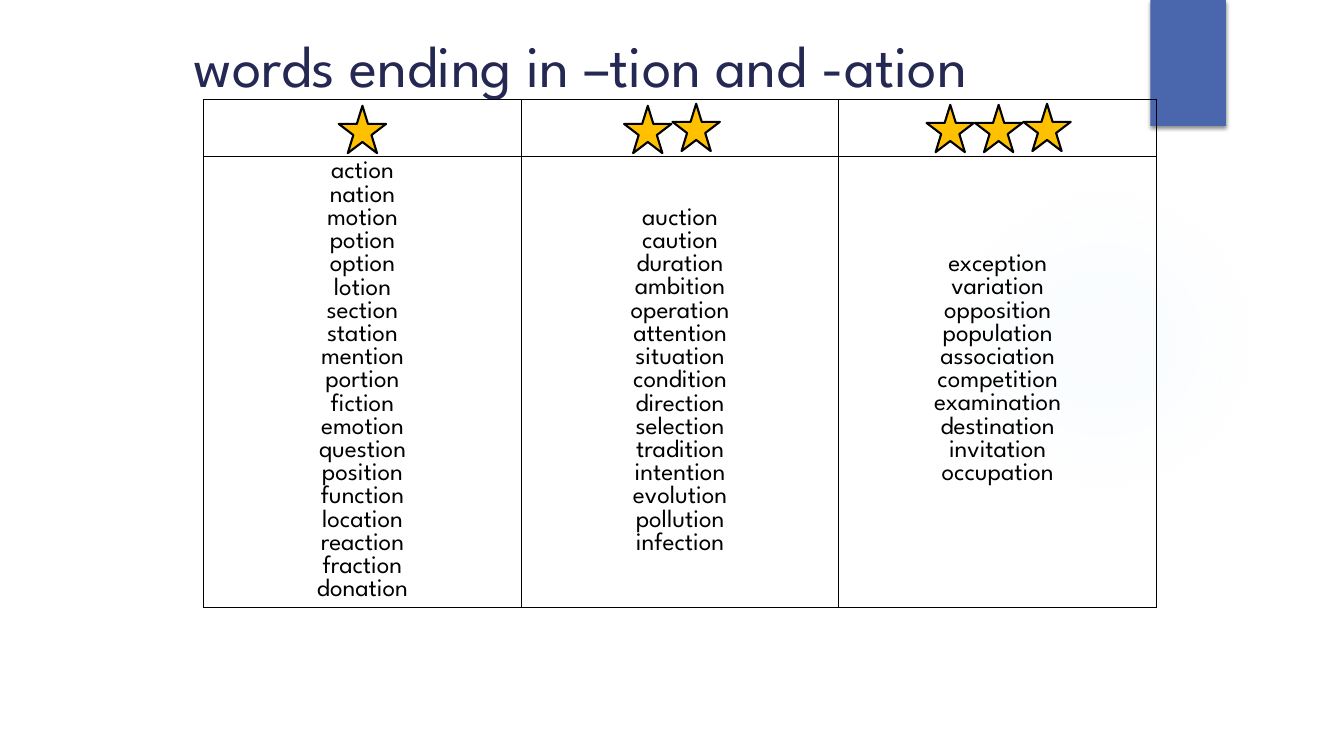
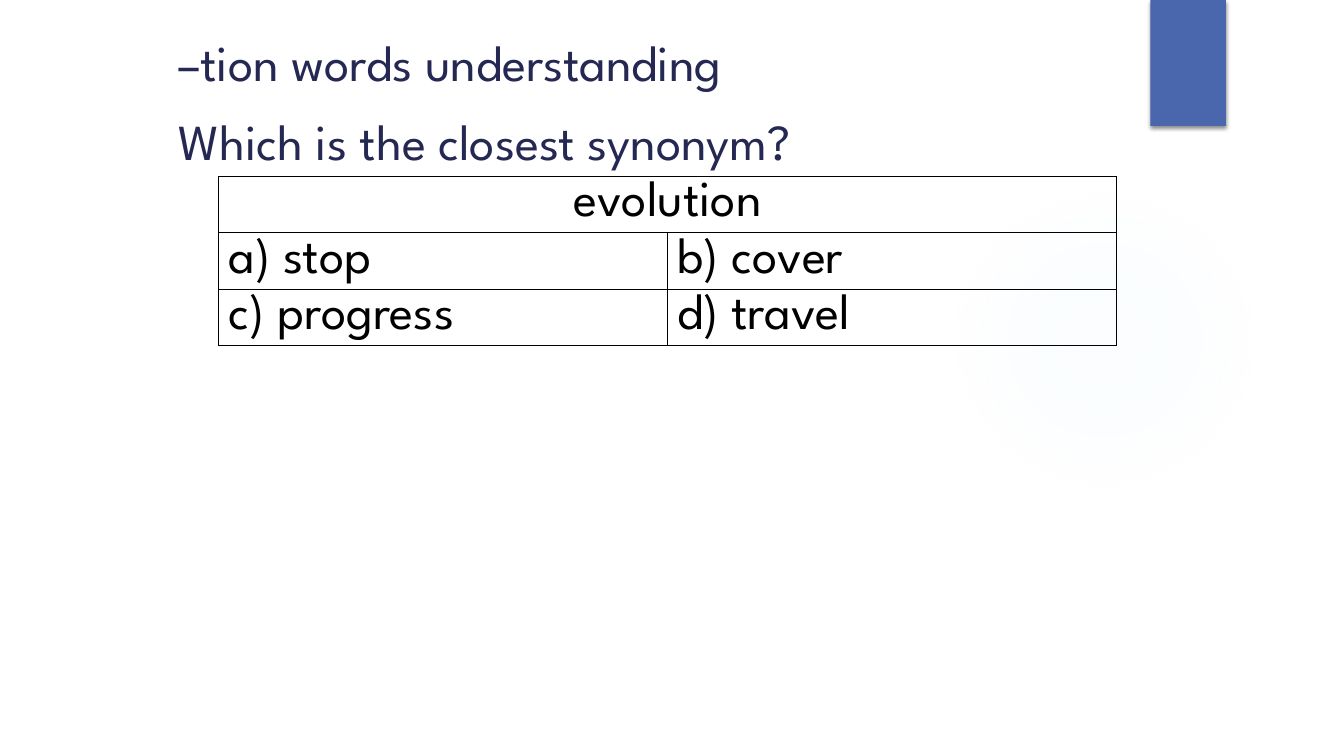
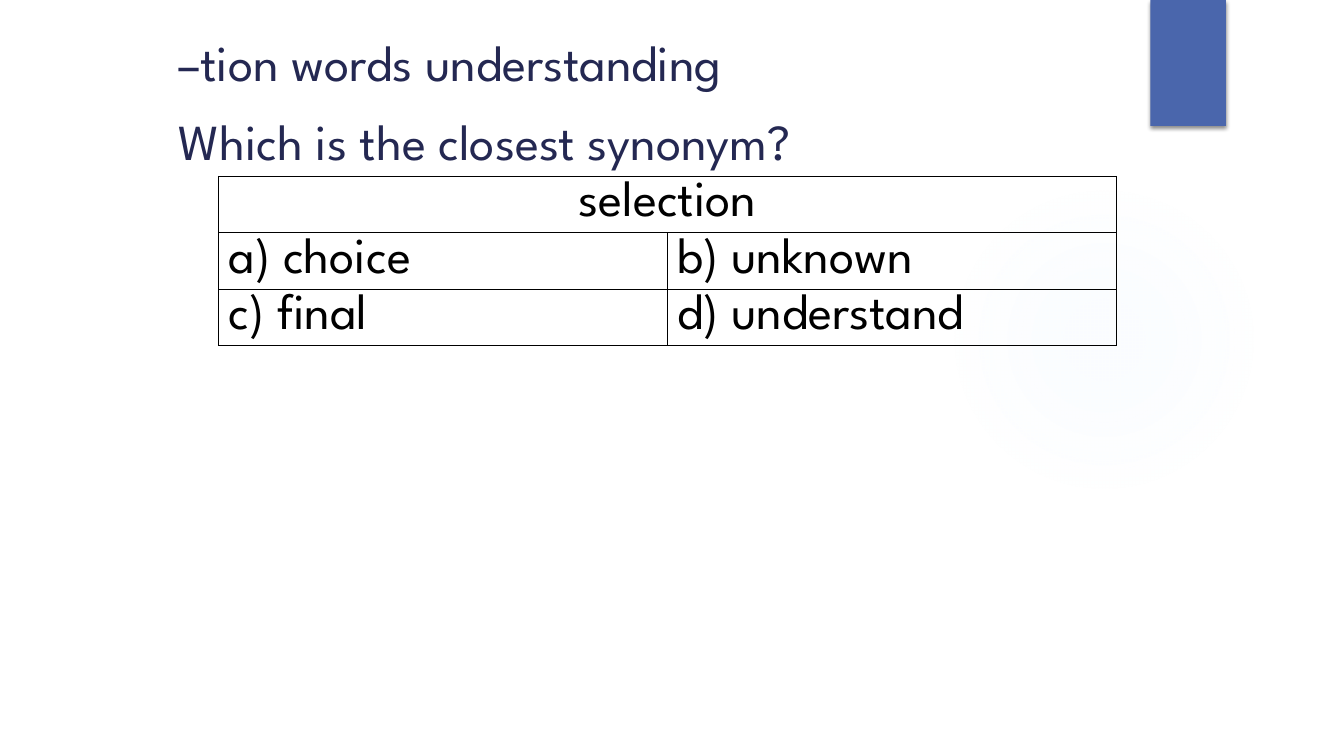
"""Build three slides on words ending in -tion and their synonyms."""
from copy import deepcopy

from pptx import Presentation
from pptx.dml.color import RGBColor
from pptx.enum.shapes import MSO_SHAPE
from pptx.enum.text import MSO_ANCHOR, MSO_AUTO_SIZE, PP_ALIGN
from pptx.oxml import parse_xml
from pptx.oxml.ns import nsdecls, qn
from pptx.util import Inches, Pt

COLOURS = {"title": "242852", "band": "4A66AC", "glow": "CDE0FB",
           "star": "FFC000", "ink": "000000"}
FONT = "League Spartan"
LINE_PITCH = 0.23


def add_titled_slide(heading, box, size, indent=0.1):
    slide = prs.slides.add_slide(layout)
    title = slide.shapes.title
    title.left, title.top, title.width, title.height = map(Inches, box)
    frame = title.text_frame
    frame.text = heading
    settings = {"word_wrap": True, "auto_size": MSO_AUTO_SIZE.NONE,
                "vertical_anchor": MSO_ANCHOR.TOP,
                "margin_left": Inches(indent), "margin_top": Inches(0.07)}
    for name, value in settings.items():
        setattr(frame, name, value)
    paragraph = frame.paragraphs[0]
    paragraph.alignment = PP_ALIGN.LEFT
    paragraph.line_spacing = 1.3
    for run in paragraph.runs:
        run.font.name, run.font.size = FONT, Pt(size)
        run.font.color.rgb = RGBColor.from_string(COLOURS["title"])
    run_format = title.element.find(".//" + qn("a:rPr"))
    for line_break in title.element.findall(".//" + qn("a:br")):
        line_break.insert(0, deepcopy(run_format))
    return slide


def add_word_table(slide, left, top, column_width, row_heights, cells, size, centred_rows):
    columns = len(cells[0])
    table = slide.shapes.add_table(
        len(cells), columns, Inches(left), Inches(top),
        Inches(column_width * columns), Inches(sum(row_heights))).table
    table.first_row = table.horz_banding = False
    for column in table.columns:
        column.width = Inches(column_width)
    for r, (height, texts) in enumerate(zip(row_heights, cells)):
        table.rows[r].height = Inches(height)
        for c, text in enumerate(texts):
            cell = table.cell(r, c)
            properties = cell._tc.get_or_add_tcPr()
            for side in ("lnL", "lnR", "lnT", "lnB"):
                properties.append(parse_xml(
                    f'<a:{side} {nsdecls("a")} w="{Pt(1)}"><a:solidFill>'
                    f'<a:srgbClr val="{COLOURS["ink"]}"/></a:solidFill></a:{side}>'))
            cell.fill.background()
            if not text:
                continue
            cell.text = text
            for paragraph in cell.text_frame.paragraphs:
                paragraph.alignment = PP_ALIGN.CENTER if r in centred_rows else PP_ALIGN.LEFT
                for run in paragraph.runs:
                    run.font.name, run.font.size = FONT, Pt(size)
                    run.font.color.rgb = RGBColor.from_string(COLOURS["ink"])
    return table


prs = Presentation()
prs.slide_width, prs.slide_height = Inches(13.33), Inches(7.5)
layout = prs.slide_layouts[5]
for placeholder in list(layout.placeholders)[1:]:
    layout.shapes.element.remove(placeholder.element)

words_slide = add_titled_slide("words ending in –tion and -ation",
                               (1.67, 0, 9.99, 0.92), 42, indent=0.25)

glow = words_slide.shapes.add_shape(MSO_SHAPE.OVAL, Inches(9.41), Inches(1.83),
                                    Inches(3.08), Inches(3.08))
band = words_slide.shapes.add_shape(MSO_SHAPE.RECTANGLE, Inches(11.41), 0,
                                    Inches(0.75), Inches(1.25))
for decoration in (glow, band):
    decoration.line.fill.background()
    decoration.shadow.inherit = False
    layout.shapes.element.append(decoration.element)

stops = "".join(
    f'<a:gs pos="{position * 1000}"><a:srgbClr val="{COLOURS["glow"]}">'
    f'<a:alpha val="{alpha * 1000}"/></a:srgbClr></a:gs>'
    for position, alpha in ((0, 7), (36, 6), (69, 0)))
glow.element.spPr.find(qn("a:prstGeom")).addnext(parse_xml(
    f'<a:gradFill {nsdecls("a")}><a:gsLst>{stops}</a:gsLst><a:path path="circle">'
    '<a:fillToRect l="50000" t="50000" r="50000" b="50000"/></a:path></a:gradFill>'))

band.fill.solid()
band.fill.fore_color.rgb = RGBColor.from_string(COLOURS["band"])
band.element.spPr.find(qn("a:effectLst")).append(parse_xml(
    f'<a:outerShdw {nsdecls("a")} blurRad="{Pt(3)}" dist="{Pt(2)}" dir="5400000" '
    f'rotWithShape="0"><a:srgbClr val="{COLOURS["ink"]}"><a:alpha val="45000"/>'
    '</a:srgbClr></a:outerShdw>'))

word_lists = [
    "action nation motion potion option lotion section station mention portion "
    "fiction emotion question position function location reaction fraction donation",
    "auction caution duration ambition operation attention situation condition "
    "direction selection tradition intention evolution pollution infection",
    "exception variation opposition population association competition "
    "examination destination invitation occupation",
]
word_table = add_word_table(
    words_slide, 2.02, 0.99, 3.15, (0.56, 4.48),
    [[""] * 3, [words.replace(" ", "\n") for words in word_lists]], 18, {1})
for c, lines_down in enumerate((0, 2, 4)):
    word_table.cell(1, c).margin_top = Inches(0.05 + lines_down * LINE_PITCH)

star_groups = [(3.36, (1.05,)), (6.19, (1.05, 1.03)), (9.19, (1.04, 1.04, 1.03))]
for first_left, tops in star_groups:
    for i, top in enumerate(tops):
        star = words_slide.shapes.add_shape(
            MSO_SHAPE.STAR_5_POINT, Inches(first_left + i * 0.48), Inches(top),
            Inches(0.47), Inches(0.47))
        star.shadow.inherit = False
        star.fill.solid()
        star.fill.fore_color.rgb = RGBColor.from_string(COLOURS["star"])
        star.line.color.rgb = RGBColor.from_string(COLOURS["ink"])
        star.line.width = Pt(1.5)

questions = [
    ("evolution", 1.69, [["a) stop", "b) cover"], ["c) progress", "d) travel"]]),
    ("selection", 1.56, [["a) choice", "b) unknown"], ["c) final", "d) understand"]]),
]
for word, title_height, answers in questions:
    question_slide = add_titled_slide(
        "–tion words understanding\vWhich is the closest synonym?",
        (1.67, 0.06, 10, title_height), 36)
    answer_table = add_word_table(question_slide, 2.17, 1.75, 4.45, (0.56,) * 3,
                                  [[word, ""], *answers], 36, {0})
    answer_table.cell(0, 0).merge(answer_table.cell(0, 1))

prs.save("out.pptx")
